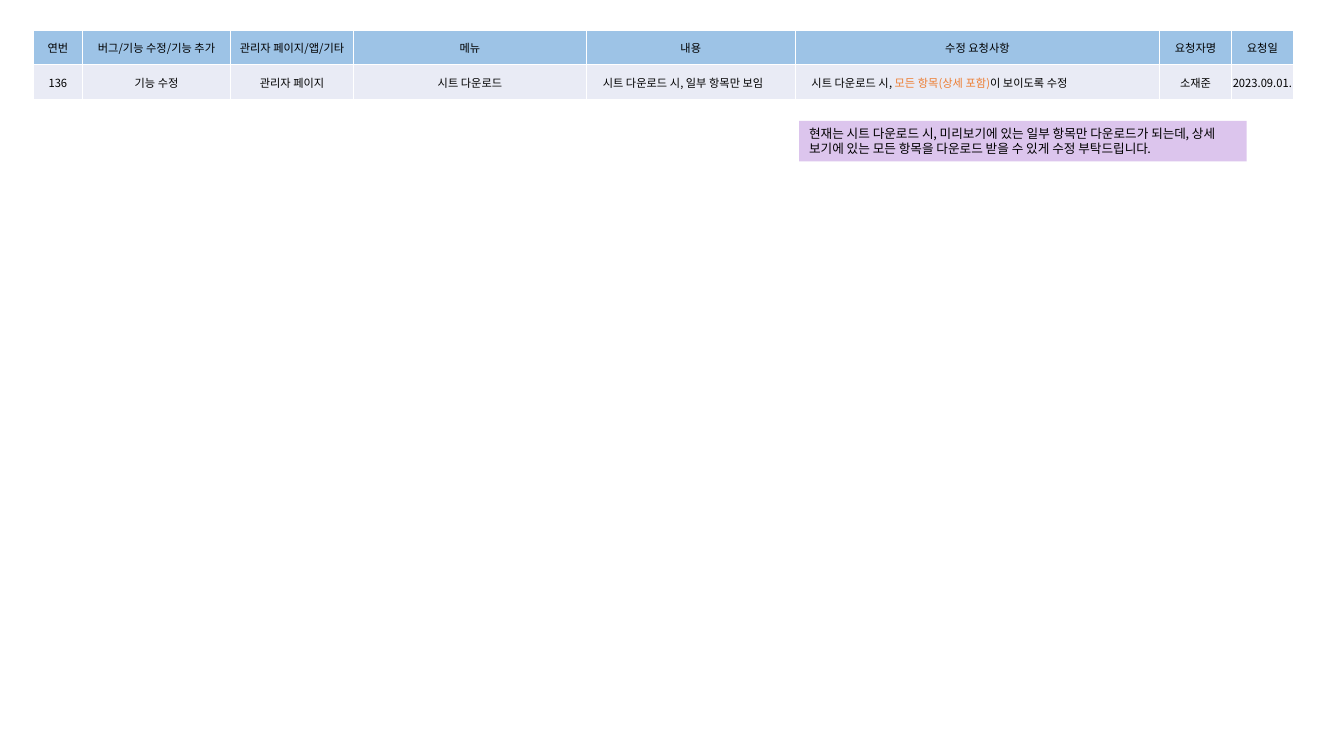
from lxml.etree import SubElement
from pptx import Presentation
from pptx.dml.color import RGBColor
from pptx.enum.text import MSO_ANCHOR, MSO_AUTO_SIZE, PP_ALIGN
from pptx.oxml.ns import qn
from pptx.util import Cm, Pt

FONT = "Noto Sans CJK KR"
COLORS = {
    "text": "000000",
    "accent": "ED7D31",
    "header": "9DC3E6",
    "row": "E9EBF5",
    "border": "FFFFFF",
    "note": "DCC5ED",
}
COLUMN_WIDTHS = [1.24, 3.73, 3.1, 5.87, 5.26, 9.19, 1.8, 1.57]
ROW_HEIGHTS = [0.86, 0.89]
INDENTED_COLUMNS = (4, 5)
HEADINGS = [
    "연번", "버그/기능 수정/기능 추가", "관리자 페이지/앱/기타", "메뉴",
    "내용", "수정 요청사항", "요청자명", "요청일",
]
REQUEST = [
    "136", "기능 수정", "관리자 페이지", "시트 다운로드",
    "시트 다운로드 시, 일부 항목만 보임",
    [("시트 다운로드 시, ", "text"), ("모든 항목(상세 포함)", "accent"),
     ("이 보이도록 수정", "text")],
    "소재준", "2023.09.01.",
]
NOTE = ("현재는 시트 다운로드 시, 미리보기에 있는 일부 항목만 다운로드가 되는데, "
        "상세 보기에 있는 모든 항목을 다운로드 받을 수 있게 수정 부탁드립니다.")


def rgb(color):
    """Return the named palette colour."""
    return RGBColor.from_string(COLORS[color])


def write_runs(paragraph, content, size):
    """Add plain text or (text, colour) pairs as formatted runs."""
    pieces = [(content, "text")] if isinstance(content, str) else content
    for words, color in pieces:
        run = paragraph.add_run()
        run.text = words
        run.font.name = FONT
        run.font.size = Pt(size)
        run.font.bold = False
        run.font.color.rgb = rgb(color)
        SubElement(run.font._element, qn("a:ea"), typeface=FONT)


def draw_borders(cell):
    """Give a cell thin borders on all four sides."""
    properties = cell._tc.get_or_add_tcPr()
    for side in ("lnL", "lnR", "lnT", "lnB"):
        line = SubElement(properties, qn(f"a:{side}"), w=str(Pt(1)))
        fill = SubElement(line, qn("a:solidFill"))
        SubElement(fill, qn("a:srgbClr"), val=COLORS["border"])


def fill_cell(cell, content, color, indented):
    """Format one table cell and write its content."""
    draw_borders(cell)
    cell.fill.solid()
    cell.fill.fore_color.rgb = rgb(color)
    cell.vertical_anchor = MSO_ANCHOR.MIDDLE
    cell.margin_left = Cm(0.41 if indented else 0.03)
    cell.margin_right = cell.margin_top = Cm(0.03)
    cell.margin_bottom = Cm(0)
    paragraph = cell.text_frame.paragraphs[0]
    paragraph.alignment = PP_ALIGN.LEFT if indented else PP_ALIGN.CENTER
    write_runs(paragraph, content, 8)


def add_request_table(slide):
    """Add the table with its headings and the request."""
    table = slide.shapes.add_table(
        len(ROW_HEIGHTS), len(COLUMN_WIDTHS), Cm(0.84), Cm(0.76),
        Cm(sum(COLUMN_WIDTHS)), Cm(sum(ROW_HEIGHTS))).table
    for column, width in zip(table.columns, COLUMN_WIDTHS):
        column.width = Cm(width)
    for row, height in zip(table.rows, ROW_HEIGHTS):
        row.height = Cm(height)
    for index, (heading, value) in enumerate(zip(HEADINGS, REQUEST)):
        fill_cell(table.cell(0, index), heading, "header", False)
        fill_cell(table.cell(1, index), value, "row", index in INDENTED_COLUMNS)


def add_note(slide):
    """Add the tinted explanation under the request column."""
    note = slide.shapes.add_textbox(Cm(20.14), Cm(3.05), Cm(11.28), Cm(1.02))
    note.fill.solid()
    note.fill.fore_color.rgb = rgb("note")
    note.text_frame.word_wrap = True
    note.text_frame.auto_size = MSO_AUTO_SIZE.SHAPE_TO_FIT_TEXT
    write_runs(note.text_frame.paragraphs[0], NOTE, 9)


def main():
    """Build and save the slide."""
    presentation = Presentation()
    presentation.slide_width = Cm(33.87)
    presentation.slide_height = Cm(19.05)
    slide = presentation.slides.add_slide(presentation.slide_layouts[6])
    add_request_table(slide)
    add_note(slide)
    presentation.save("out.pptx")


if __name__ == "__main__":
    main()
